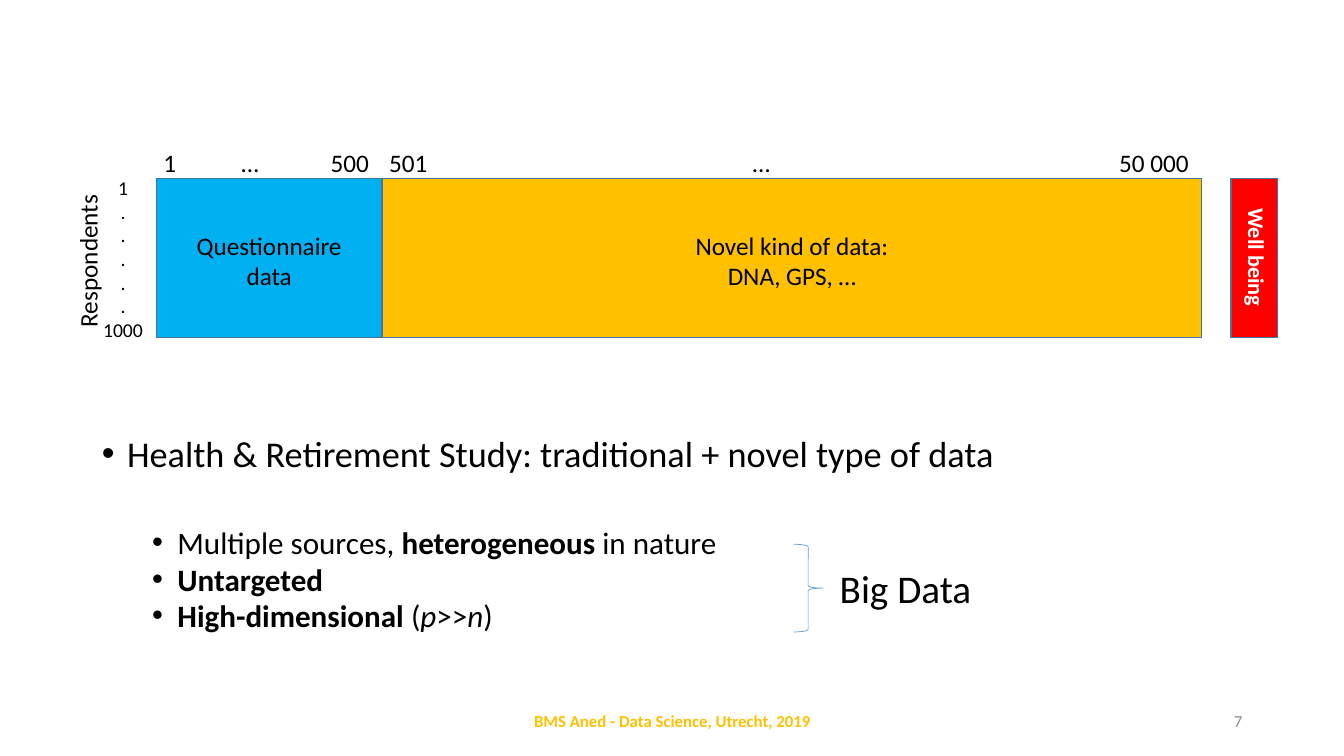
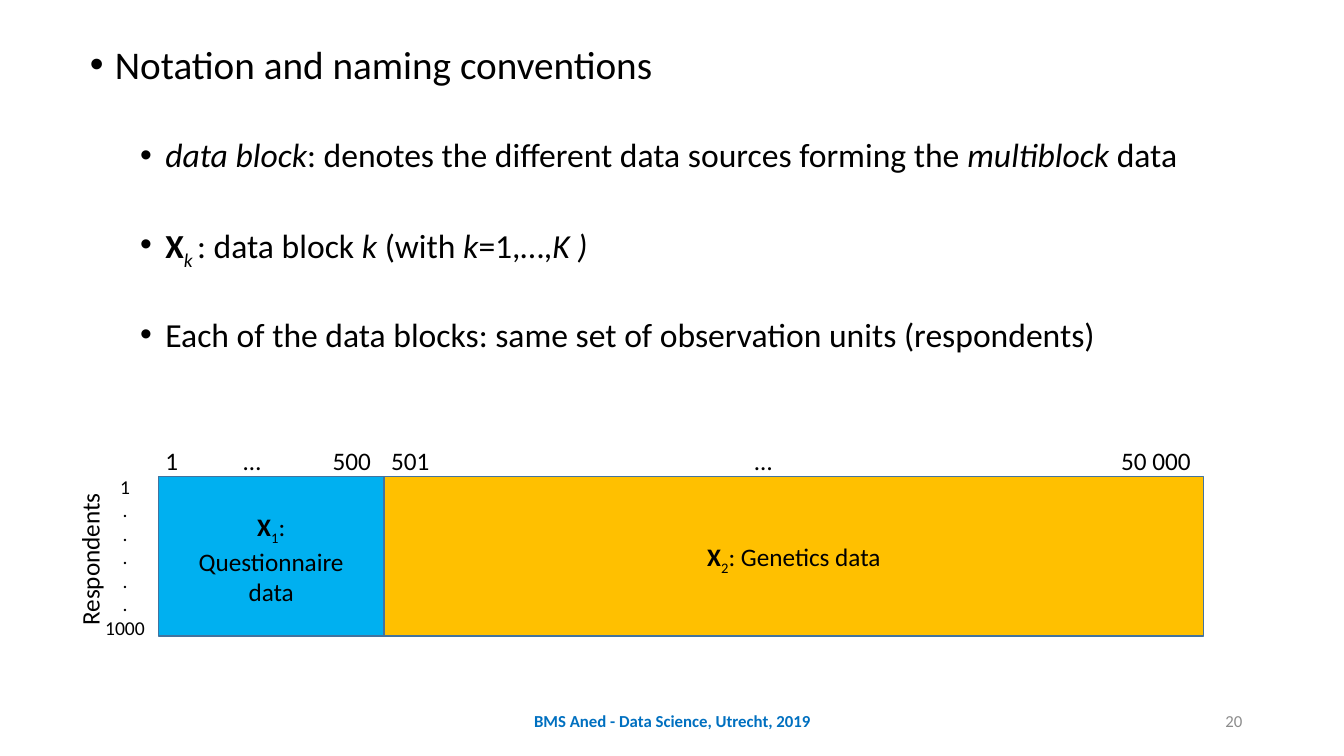
import dataclasses
import typing

import lxml.etree
import pptx
import pptx.dml.color
import pptx.enum.shapes
import pptx.enum.text
import pptx.oxml.ns
import pptx.util

Inches = pptx.util.Inches
Pt = pptx.util.Pt
ALIGN = pptx.enum.text.PP_ALIGN
ANCHOR = pptx.enum.text.MSO_ANCHOR
SHAPE = pptx.enum.shapes.MSO_SHAPE

FONT = "Calibri"
COLORS = {
    "text": "000000",
    "white": "FFFFFF",
    "number": "8C8C8C",
    "outline": "43739E",
    "brace": "5B9BD5",
    "questionnaire": "00B0F0",
    "novel": "FFC000",
    "outcome": "FF0000",
    "footer blue": "0070C0",
}
FOOTER = "BMS Aned - Data Science, Utrecht, 2019"

# Data block geometry, in inches
BLOCK_HEIGHT = 1.58
QUESTIONNAIRE_WIDTH = 2.24
NOVEL_WIDTH = 8.13


class Span(typing.NamedTuple):
    text: str
    bold: bool = False
    italic: bool = False
    subscript: bool = False


class Area(typing.NamedTuple):
    left: float
    top: float
    width: float
    height: float

    def lengths(self) -> list:
        return [Inches(value) for value in self]


Line = list[Span]


@dataclasses.dataclass
class Bullet:
    spans: Line
    size: float
    space_before: float
    level: int = 0


@dataclasses.dataclass
class DataBlock:
    width: float
    color: str
    label: list[Line]
    scale: str
    middle_tab: float


def color(name: str) -> pptx.dml.color.RGBColor:
    return pptx.dml.color.RGBColor.from_string(COLORS[name])


def plain(*texts: str) -> list[Line]:
    return [[Span(text)] for text in texts]


# Text
def add_spans(para, spans: Line, *, size: float, ink: str = "text") -> None:
    for span in spans:
        run = para.add_run()
        run.text = span.text
        font = run.font
        font.name, font.size = FONT, Pt(size)
        font.bold, font.italic = span.bold, span.italic
        font.color.rgb = color(ink)
        if span.subscript:
            run._r.get_or_add_rPr().set("baseline", "-25000")


def write_text(frame, lines: list[Line], *, size: float = 18, ink: str = "text",
               align=ALIGN.CENTER, anchor=ANCHOR.TOP) -> None:
    frame.word_wrap = True
    frame.vertical_anchor = anchor
    for index, spans in enumerate(lines):
        para = frame.add_paragraph() if index else frame.paragraphs[0]
        para.alignment = align
        add_spans(para, spans, size=size, ink=ink)


def add_text(page, area: Area, lines: list[Line], *, rotation: float = 0, **text_format):
    box = page.shapes.add_textbox(*area.lengths())
    box.rotation = rotation
    write_text(box.text_frame, lines, **text_format)
    return box


def add_child(parent, tag: str, **attributes: str):
    child = lxml.etree.SubElement(parent, pptx.oxml.ns.qn(tag))
    for name, value in attributes.items():
        child.set(name, value)
    return child


def fill_body(page, area: Area, bullets: list[Bullet], line_spacing: float) -> None:
    body = page.placeholders[1]
    body.left, body.top, body.width, body.height = area.lengths()
    frame = body.text_frame
    frame.auto_size = pptx.enum.text.MSO_AUTO_SIZE.NONE
    for index, bullet in enumerate(bullets):
        para = frame.add_paragraph() if index else frame.paragraphs[0]
        para.level = bullet.level
        para.line_spacing = line_spacing
        para.space_before = Pt(bullet.space_before)
        properties = para._p.get_or_add_pPr()
        properties.set("marL", str(Inches(0.25 + 0.5 * bullet.level)))
        properties.set("indent", str(Inches(-0.25)))
        add_child(properties, "a:buFont", typeface="Arial")
        add_child(properties, "a:buChar", char="•")
        add_spans(para, bullet.spans, size=bullet.size)


# Shapes
def add_shape(page, kind, area: Area, *, fill: str | None, line: str, weight: float):
    shape = page.shapes.add_shape(kind, *area.lengths())
    shape.shadow.inherit = False
    if fill:
        shape.fill.solid()
        shape.fill.fore_color.rgb = color(fill)
    else:
        shape.fill.background()
    shape.line.color.rgb = color(line)
    shape.line.width = Pt(weight)
    return shape


def add_rectangle(page, area: Area, fill: str):
    return add_shape(page, SHAPE.RECTANGLE, area, fill=fill, line="outline", weight=1)


def add_block(page, left: float, top: float, block: DataBlock) -> None:
    shape = add_rectangle(page, Area(left, top, block.width, BLOCK_HEIGHT), block.color)
    frame = shape.text_frame
    frame.margin_left = frame.margin_right = Inches(0.35)
    frame.margin_top = Inches(0.1)
    write_text(frame, block.label, anchor=ANCHOR.MIDDLE)

    # Column numbers, spread with tab stops
    scale = add_text(page, Area(left, top - 0.36, block.width, 0.4),
                     plain(block.scale), align=ALIGN.LEFT)
    scale.text_frame.margin_left = Inches(0.07)
    scale.text_frame.margin_right = 0
    properties = scale.text_frame.paragraphs[0]._p.get_or_add_pPr()
    stops = add_child(properties, "a:tabLst")
    for position, align in ((block.middle_tab, "ctr"), (block.width - 0.2, "r")):
        add_child(stops, "a:tab", pos=str(Inches(position)), algn=align)


def add_data_matrix(page, left: float, top: float, questionnaire: list[Line],
                    novel: list[Line]) -> None:
    blocks = [
        DataBlock(QUESTIONNAIRE_WIDTH, "questionnaire", questionnaire, "1\t…\t500", 0.86),
        DataBlock(NOVEL_WIDTH, "novel", novel, "501\t…\t50 000", 3.69),
    ]
    block_left = left
    for block in blocks:
        add_block(page, block_left, top, block)
        block_left += block.width
    add_text(page, Area(left - 1.58, top + 0.62, 1.8, 0.4), plain("Respondents"),
             rotation=270)
    add_text(page, Area(left - 0.64, top - 0.07, 0.62, 1.75),
             plain("1", *"." * 5, "1000"), size=14)


# Slides
def add_page(deck, number: int, footer_color: str):
    page = deck.slides.add_slide(deck.slide_layouts[1])
    title = page.shapes.title._element
    title.getparent().remove(title)
    add_text(page, Area(4.42, 6.95, 4.5, 0.4), [[Span(FOOTER, bold=True)]],
             size=12, ink=footer_color, anchor=ANCHOR.MIDDLE)
    add_text(page, Area(9.42, 6.95, 3, 0.4), plain(str(number)),
             size=12, ink="number", align=ALIGN.RIGHT, anchor=ANCHOR.MIDDLE)
    return page


def build_study_page(deck) -> None:
    page = add_page(deck, 7, "novel")
    add_data_matrix(page, 1.55, 1.77, plain("Questionnaire", "data"),
                    plain("Novel kind of data:", "DNA, GPS, …"))

    # Outcome column
    add_rectangle(page, Area(12.21, 1.77, 0.46, BLOCK_HEIGHT), "outcome")
    add_text(page, Area(11.35, 2.37, 2.23, 0.37), [[Span("Well being", bold=True)]],
             rotation=90, size=16, ink="white")

    heading = "Health & Retirement Study: traditional + novel type of data"
    fill_body(page, Area(0.91, 4.31, 11.85, 2.09), [
        Bullet([Span(heading)], 25.9, 10),
        Bullet([Span("Multiple sources, "), Span("heterogeneous", bold=True),
                Span(" in nature")], 22.2, 40, level=1),
        Bullet([Span("Untargeted", bold=True)], 22.2, 5, level=1),
        Bullet([Span("High-dimensional", bold=True), Span(" ("), Span("p", italic=True),
                Span(">>"), Span("n", italic=True), Span(")")], 22.2, 5, level=1),
    ], line_spacing=0.8)

    # Brace that sums up the three properties
    add_shape(page, SHAPE.RIGHT_BRACE, Area(7.87, 5.4, 0.29, 0.87),
              fill=None, line="brace", weight=0.5)
    add_text(page, Area(8.23, 5.55, 1.78, 0.57), plain("Big Data"),
             size=28, align=ALIGN.LEFT)


def build_notation_page(deck) -> None:
    page = add_page(deck, 20, "footer blue")
    details = [
        [Span("data block", italic=True),
         Span(": denotes the different data sources forming the "),
         Span("multiblock", italic=True), Span(" data")],
        [Span("X", bold=True), Span("k ", italic=True, subscript=True),
         Span(": data block "), Span("k", italic=True), Span(" (with "),
         Span("k", italic=True), Span("=1,…,"), Span("K )", italic=True)],
        [Span("Each of the data blocks: same set of observation units (respondents)")],
    ]
    fill_body(page, Area(0.79, 0.4, 11.5, 4.76), [
        Bullet([Span("Notation and naming conventions")], 28, 10),
        *(Bullet(spans, 24, 36.4, level=1) for spans in details),
    ], line_spacing=0.9)
    add_data_matrix(
        page, 1.57, 4.73,
        [[Span("X", bold=True), Span("1", subscript=True), Span(": Questionnaire")],
         [Span("data")]],
        [[Span("X", bold=True), Span("2", subscript=True), Span(": Genetics data")]])


def main() -> None:
    deck = pptx.Presentation()
    deck.slide_width, deck.slide_height = Inches(13.33), Inches(7.5)
    build_study_page(deck)
    build_notation_page(deck)
    deck.save("out.pptx")


if __name__ == "__main__":
    main()
